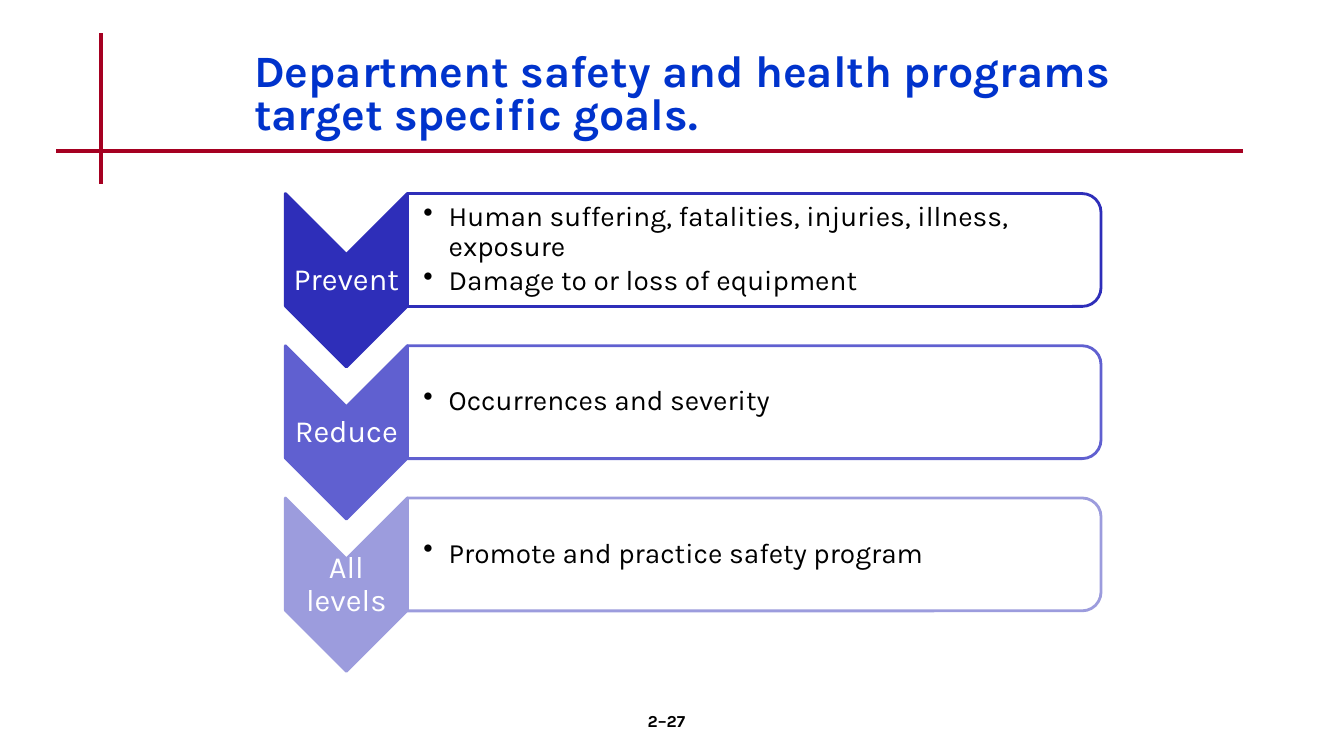
from lxml import etree
from pptx import Presentation
from pptx.dml.color import RGBColor
from pptx.enum.shapes import MSO_CONNECTOR, MSO_SHAPE
from pptx.enum.text import MSO_ANCHOR, MSO_AUTO_SIZE, PP_ALIGN
from pptx.oxml.ns import qn
from pptx.util import Inches, Pt

CHEVRON = MSO_SHAPE.CHEVRON
ROUND = MSO_SHAPE.ROUND_2_SAME_RECTANGLE
STRAIGHT = MSO_CONNECTOR.STRAIGHT
MIDDLE, TOP = MSO_ANCHOR.MIDDLE, MSO_ANCHOR.TOP
LEFT, CENTER = PP_ALIGN.LEFT, PP_ALIGN.CENTER
FIXED = MSO_AUTO_SIZE.NONE

FONT = "Karla"
COLORS = {
    "rule": "A50021", "title": "0033CC", "text": "000000", "paper": "FFFFFF",
    "dark": "2E2EB9", "mid": "6060D0", "light": "9C9CDD",
}
TITLE = "Department safety and health programs target specific goals."
PAGE = "2–27"
GOALS = [
    ("Prevent", "dark", ["Human suffering, fatalities, injuries, illness, exposure",
                         "Damage to or loss of equipment"]),
    ("Reduce", "mid", ["Occurrences and severity"]),
    ("All levels", "light", ["Promote and practice safety program"]),
]
RULES = [(1, 0.33, 1, 1.83), (0.56, 1.5, 12.33, 1.5)]

# Layout of the goal rows, in inches
ROW_TOP, STEP = 1.92, 1.51
ARROW_X, ARROW_W, ARROW_H = 2.83, 1.21, 1.72
BOX_X, BOX_W, BOX_H = 4.04, 6.88, 1.12


def rgb(name):
    return RGBColor.from_string(COLORS[name])


def turned(kind, x, y, w, h, fill, line):
    """Add a shape turned by 90 degrees that covers x, y, w, h on the slide."""
    shape = slide.shapes.add_shape(
        kind, Inches(x + (w - h) / 2), Inches(y + (h - w) / 2), Inches(h), Inches(w))
    shape.rotation = 90
    shape.shadow.inherit = False
    shape.fill.solid()
    shape.fill.fore_color.rgb = rgb(fill)
    shape.line.color.rgb = rgb(line)
    shape.line.width = Pt(2)
    return shape


def write(frame, lines, size, color, align=LEFT, anchor=MIDDLE, bold=False,
          spacing=None, insets=None, bullet=False):
    frame.word_wrap = True
    frame.auto_size = FIXED
    frame.vertical_anchor = anchor
    if insets:
        (frame.margin_left, frame.margin_top,
         frame.margin_right, frame.margin_bottom) = map(Inches, insets)
    for i, line in enumerate(lines):
        para = frame.add_paragraph() if i else frame.paragraphs[0]
        if bullet:
            props = para._p.get_or_add_pPr()
            props.set("marL", str(Inches(0.25)))
            props.set("indent", str(-Inches(0.25)))
            etree.SubElement(props, qn("a:buChar")).set("char", "•")
        para.alignment = align
        if spacing:
            para.line_spacing = spacing
        if i:
            para.space_before = Pt(3)
        run = para.add_run()
        run.text = line
        font = run.font
        font.name, font.size, font.bold = FONT, Pt(size), bold
        font.color.rgb = rgb(color)


def label(x, y, w, h, *args, **style):
    box = slide.shapes.add_textbox(Inches(x), Inches(y), Inches(w), Inches(h))
    write(box.text_frame, *args, **style)


deck = Presentation()
deck.slide_width, deck.slide_height = Inches(13.33), Inches(7.5)
slide = deck.slides.add_slide(deck.slide_layouts[5])

for ends in RULES:
    rule = slide.shapes.add_connector(STRAIGHT, *map(Inches, ends))
    rule.line.color.rgb = rgb("rule")
    rule.line.width = Pt(3)
    etree.SubElement(rule._element.spPr, qn("a:effectLst"))

title = slide.shapes.title
title.left, title.top = Inches(2.42), Inches(0.33)
title.width, title.height = Inches(9.08), Inches(1.25)
write(title.text_frame, [TITLE], 32, "title", bold=True, spacing=0.8)

for row, (name, tone, points) in enumerate(GOALS):
    y = ROW_TOP + row * STEP
    turned(CHEVRON, ARROW_X, y, ARROW_W, ARROW_H, tone, tone)
    label(ARROW_X, y + 0.6, ARROW_W, 0.52, [name], 22, "paper", align=CENTER,
          spacing=0.9, insets=[0.02] * 4)
    box = turned(ROUND, BOX_X, y, BOX_W, BOX_H, "paper", tone)
    tint = box._element.spPr.find(qn("a:solidFill"))[0]
    etree.SubElement(tint, qn("a:alpha")).set("val", "90000")
    label(BOX_X, y + 0.05, 6.82, 1.01, points, 20, "text", spacing=0.9,
          insets=(0.16, 0.01, 0.01, 0.01), bullet=True)

label(5.22, 7, 2.78, 0.5, [PAGE], 12, "text", align=CENTER, anchor=TOP, bold=True)

deck.save("out.pptx")
